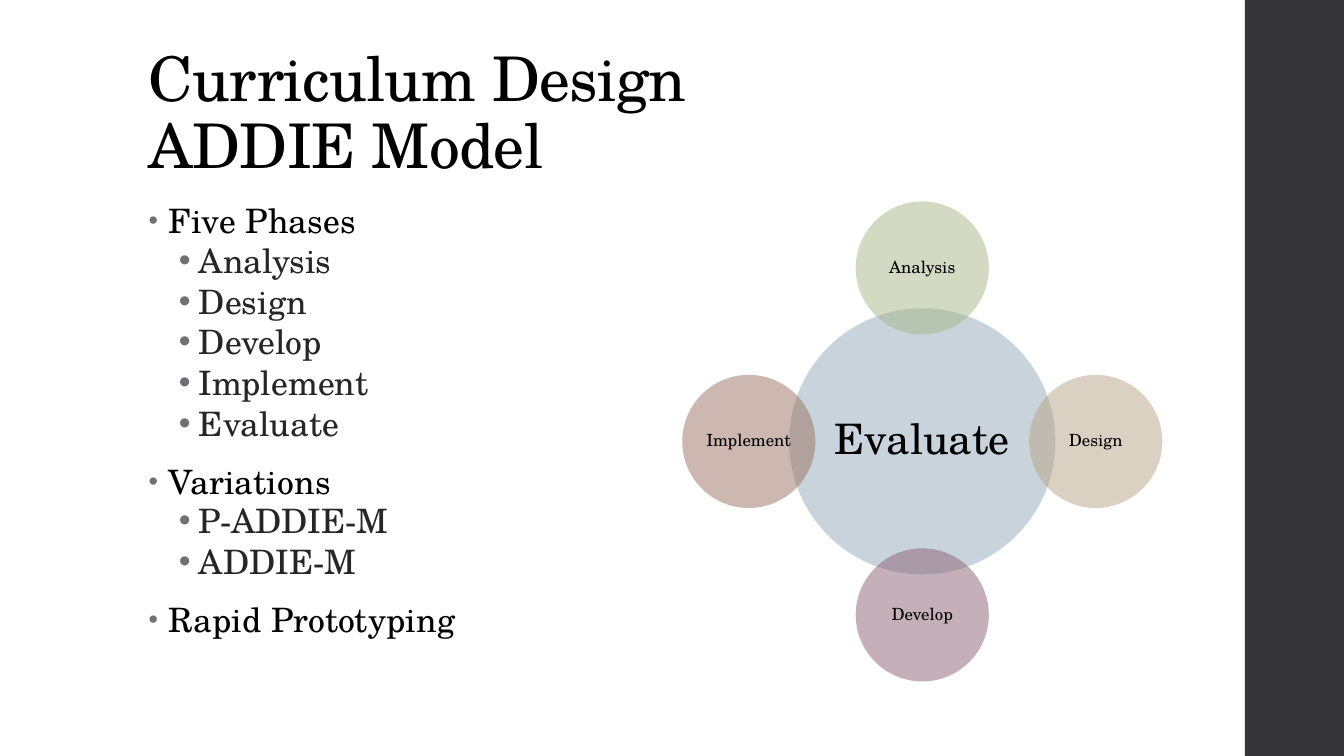
from pptx import Presentation
from pptx.dml.color import RGBColor
from pptx.enum.shapes import MSO_SHAPE as Shape
from pptx.enum.text import MSO_ANCHOR as Anchor, MSO_AUTO_SIZE as AutoSize, PP_ALIGN as Align
from pptx.oxml.ns import qn
from pptx.util import Inches, Pt
from lxml.etree import SubElement

BLACK = RGBColor(0x00, 0x00, 0x00)
CHARCOAL = RGBColor(0x26, 0x26, 0x26)
BAND = RGBColor(0x35, 0x35, 0x37)
BULLET = RGBColor(0x6F, 0x6F, 0x74)
BLUE = RGBColor(0x92, 0xA9, 0xB9)
GREEN = RGBColor(0xA7, 0xB7, 0x89)
SAND = RGBColor(0xB9, 0xA4, 0x89)
PLUM = RGBColor(0x8D, 0x63, 0x74)
RUST = RGBColor(0x9B, 0x73, 0x62)

COLUMNS, ROWS = 160, 90
HUB_X, HUB_Y, HUB_SIZE = 109.8, 52.55, 31.7
PHASE_SIZE, ORBIT = HUB_SIZE / 2, 20.65

# name, colour, horizontal and vertical direction from the hub
PHASES = [
    ("Analysis", GREEN, 0, -1),
    ("Design", SAND, 1, 0),
    ("Develop", PLUM, 0, 1),
    ("Implement", RUST, -1, 0),
]
OUTLINE = [
    ("Five Phases", ["Analysis", "Design", "Develop", "Implement", "Evaluate"]),
    ("Variations", ["P-ADDIE-M", "ADDIE-M"]),
    ("Rapid Prototyping", []),
]


def write(paragraph, text, *, size, color=BLACK, align=Align.LEFT, line=0.9,
          before=0, after=0, tracking=0):
    """Fill a paragraph; tracking is letter spacing in hundredths of a point."""
    paragraph.text = text
    paragraph.alignment = align
    paragraph.line_spacing = line
    paragraph.space_before, paragraph.space_after = Pt(before), Pt(after)
    for run in paragraph.runs:
        run.font.name = SlideBuilder.FONT
        run.font.size = Pt(size)
        run.font.color.rgb = color
        run._r.get_or_add_rPr().set("spc", str(tracking))


def add_bullet(paragraph, indent, percent):
    properties = paragraph._p.get_or_add_pPr()
    properties.set("marL", str(Inches(indent)))
    properties.set("indent", str(Inches(-0.2)))
    color = SubElement(properties, qn("a:buClr"))
    SubElement(color, qn("a:srgbClr"), val=str(BULLET))
    SubElement(properties, qn("a:buSzPct"), val=str(percent * 1000))
    SubElement(properties, qn("a:buFont"), typeface="Arial")
    SubElement(properties, qn("a:buChar"), char="•")


class SlideBuilder:
    FONT = "TeX Gyre Schola"

    def __init__(self, presentation):
        self.column = presentation.slide_width / COLUMNS
        self.row = presentation.slide_height / ROWS
        self.slide = presentation.slides.add_slide(presentation.slide_layouts[5])

    def box(self, left, top, width, height):
        """Turn grid columns and rows into slide lengths."""
        return (round(left * self.column), round(top * self.row),
                round(width * self.column), round(height * self.row))

    def title(self, text, *area):
        title = self.slide.shapes.title
        title.left, title.top, title.width, title.height = self.box(*area)
        frame = title.text_frame
        frame.auto_size = AutoSize.NONE
        frame.vertical_anchor = Anchor.BOTTOM
        write(frame.paragraphs[0], text, size=44, tracking=-50)

    def shape(self, kind, color, *area):
        shape = self.slide.shapes.add_shape(kind, *self.box(*area))
        shape.shadow.inherit = False
        shape.fill.solid()
        shape.fill.fore_color.rgb = color
        shape.line.fill.background()
        return shape

    def circle(self, text, color, center_x, center_y, diameter, size, inset):
        circle = self.shape(Shape.OVAL, color, center_x - diameter / 2,
                            center_y - diameter / 2, diameter, diameter)
        fill = circle._element.spPr.find(qn("a:solidFill"))
        SubElement(fill[0], qn("a:alpha"), val="50000")
        frame = circle.text_frame
        frame.word_wrap = True
        frame.vertical_anchor = Anchor.MIDDLE
        frame.margin_left = frame.margin_right = Inches(inset)
        frame.margin_top = frame.margin_bottom = Inches(inset)
        write(frame.paragraphs[0], text, size=size, align=Align.CENTER)

    def outline(self, sections, *area):
        frame = self.slide.shapes.add_textbox(*self.box(*area)).text_frame
        frame.word_wrap = True
        items = [(text, level) for heading, children in sections
                 for text, level in [(heading, 0)] + [(child, 1) for child in children]]
        for index, (text, level) in enumerate(items):
            paragraph = frame.add_paragraph() if index else frame.paragraphs[0]
            paragraph.level = level
            if level:
                write(paragraph, text, size=24, color=CHARCOAL, line=0.8, before=3, after=3)
                add_bullet(paragraph, 0.5, 100)
            else:
                write(paragraph, text, size=24, line=0.85, before=14, after=2, tracking=10)
                add_bullet(paragraph, 0.2, 80)


def main():
    presentation = Presentation()
    presentation.slide_width, presentation.slide_height = Inches(13.33), Inches(7.5)
    builder = SlideBuilder(presentation)
    builder.shape(Shape.RECTANGLE, BAND, 148.2, 0, 11.8, ROWS)
    builder.title("Curriculum Design\vADDIE Model", 16.5, 4.8, 127.2, 17.4)
    builder.circle("Evaluate", BLUE, HUB_X, HUB_Y, HUB_SIZE, 30, 0.04)
    for name, color, across, down in PHASES:
        builder.circle(name, color, HUB_X + across * ORBIT, HUB_Y + down * ORBIT,
                       PHASE_SIZE, 12, 0.02)
    builder.outline(OUTLINE, 16.5, 24, 58.8, 57.1)
    presentation.save("out.pptx")


if __name__ == "__main__":
    main()
